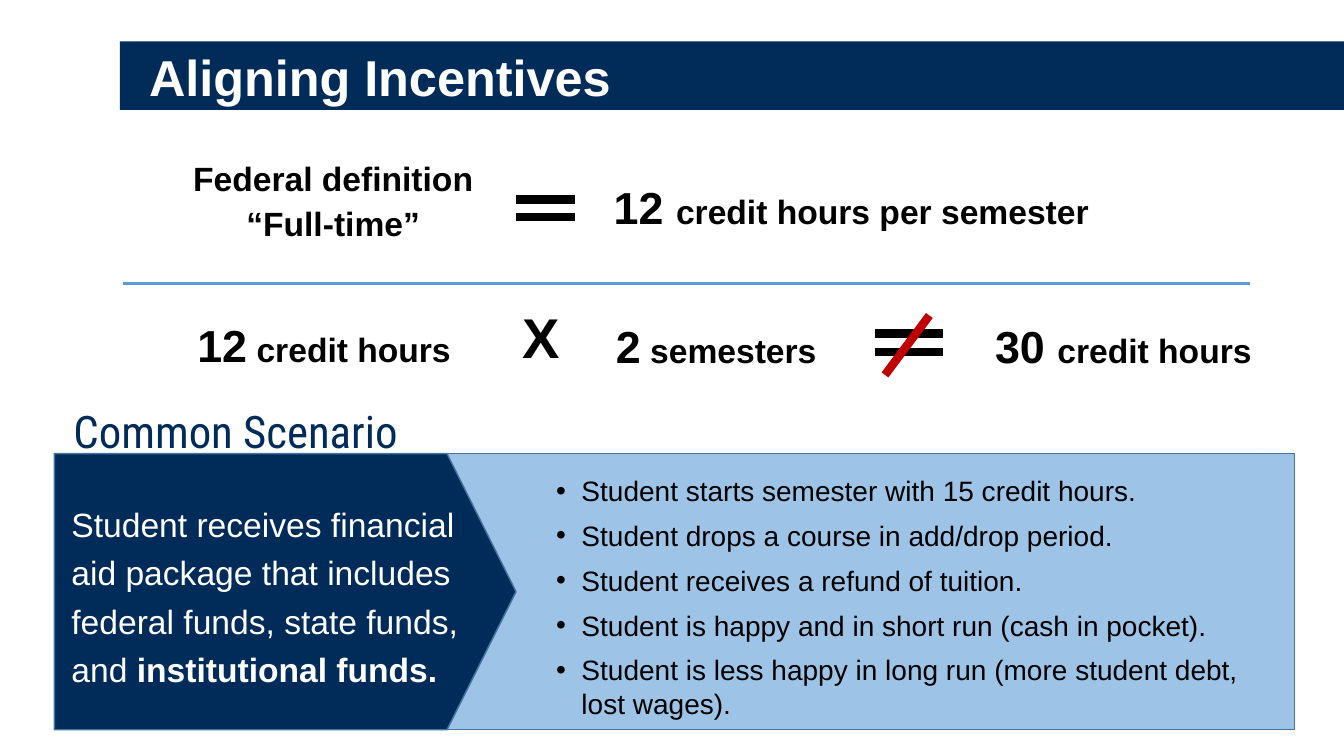
from dataclasses import dataclass

from lxml.etree import SubElement
from pptx import Presentation
from pptx.dml.color import RGBColor
from pptx.enum.shapes import MSO_CONNECTOR as Connector, MSO_SHAPE as Preset
from pptx.enum.text import MSO_ANCHOR as Anchor, PP_ALIGN as Align
from pptx.oxml.ns import qn
from pptx.util import Emu, Inches, Pt

NAVY, SKY, EDGE, RULE = "012C5A", "9DC3E6", "43739E", "5B9BD5"
BLACK, WHITE, RED = "000000", "FFFFFF", "C00000"

COLUMNS, ROWS = 160, 90
presentation = Presentation()
presentation.slide_width, presentation.slide_height = Inches(13.33), Inches(7.5)
COLUMN = presentation.slide_width / COLUMNS
ROW = presentation.slide_height / ROWS
slide = presentation.slides.add_slide(presentation.slide_layouts[6])


@dataclass(frozen=True)
class Area:
    """Left, top, width and height in grid columns and rows."""
    left: float
    top: float
    width: float
    height: float

    def emu(self) -> list[Emu]:
        return [Emu(round(self.left * COLUMN)), Emu(round(self.top * ROW)),
                Emu(round(self.width * COLUMN)), Emu(round(self.height * ROW))]


@dataclass(frozen=True)
class Phrase:
    text: str
    size: float
    bold: bool = True


@dataclass(frozen=True)
class Label:
    area: Area
    phrases: tuple[Phrase, ...]
    color: str = BLACK
    align: Align = Align.CENTER
    spacing: float = 1.1
    font: str = "Arial"
    anchor: Anchor = Anchor.TOP
    wrap: bool = True


@dataclass(frozen=True)
class Stroke:
    x1: float
    y1: float
    x2: float
    y2: float
    color: str = BLACK
    width: float = 6


def rgb(color: str) -> RGBColor:
    return RGBColor.from_string(color)


def draw_shape(preset: Preset, area: Area, fill: str, edge: str | None = None):
    shape = slide.shapes.add_shape(preset, *area.emu())
    shape.shadow.inherit = False
    shape.fill.solid()
    shape.fill.fore_color.rgb = rgb(fill)
    if edge:
        shape.line.color.rgb = rgb(edge)
        shape.line.width = Pt(1)
    else:
        shape.line.fill.background()
    return shape


def draw_label(label: Label) -> None:
    frame = slide.shapes.add_textbox(*label.area.emu()).text_frame
    frame.word_wrap = label.wrap
    frame.vertical_anchor = label.anchor
    paragraph = frame.paragraphs[0]
    paragraph.alignment, paragraph.line_spacing = label.align, label.spacing
    for phrase in label.phrases:
        run = paragraph.add_run()
        run.text = phrase.text
        run.font.name, run.font.size, run.font.bold = label.font, Pt(phrase.size), phrase.bold
        run.font.color.rgb = rgb(label.color)


def draw_bullets(area: Area, items: list[str]) -> None:
    frame = slide.shapes.add_textbox(*area.emu()).text_frame
    frame.word_wrap = True
    frame.text = "\n".join(items)
    for paragraph in frame.paragraphs:
        properties = paragraph._p.get_or_add_pPr()
        properties.set("marL", str(Inches(0.25)))
        properties.set("indent", str(-Inches(0.25)))
        SubElement(properties, qn("a:buFont")).set("typeface", "Arial")
        SubElement(properties, qn("a:buChar")).set("char", "•")
        paragraph.space_after = Pt(8)
        for run in paragraph.runs:
            run.font.name, run.font.size = "Arial", Pt(20)
            run.font.color.rgb = rgb(BLACK)


def draw_stroke(stroke: Stroke) -> None:
    line = slide.shapes.add_connector(
        Connector.STRAIGHT,
        Emu(round(stroke.x1 * COLUMN)), Emu(round(stroke.y1 * ROW)),
        Emu(round(stroke.x2 * COLUMN)), Emu(round(stroke.y2 * ROW)))
    line.line.color.rgb = rgb(stroke.color)
    line.line.width = Pt(stroke.width)
    SubElement(line._element.spPr, qn("a:effectLst"))


def equation_term(area: Area, number: str, unit: str) -> Label:
    return Label(area, (Phrase(number, 32), Phrase(unit, 24)))


def equals_sign(left: float, right: float, top: float, gap: float) -> list[Stroke]:
    return [Stroke(left, y, right, y) for y in (top, top + gap)]


# Title band
draw_shape(Preset.RECTANGLE, Area(14.28, 4.92, 145.72, 8.16), NAVY)

# Scenario panel and arrow
PANEL_TOP, PANEL_HEIGHT = 54, 32.88
draw_shape(Preset.RECTANGLE, Area(52.2, PANEL_TOP, 101.88, PANEL_HEIGHT), SKY, EDGE)
draw_bullets(Area(65.04, 55.8, 86.88, 31.08), [
    "Student starts semester with 15 credit hours.",
    "Student drops a course in add/drop period.",
    "Student receives a refund of tuition.",
    "Student is happy and in short run (cash in pocket).",
    "Student is less happy in long run (more student debt, lost wages).",
])
aid_arrow = draw_shape(Preset.PENTAGON, Area(6.48, PANEL_TOP, 54.96, PANEL_HEIGHT), NAVY, EDGE)
aid_arrow.adjustments[0] = 0.25

# Title, equations and scenario wording
TERM_HEIGHT = 8.28
labels = [
    Label(Area(16.56, 0.84, 130.08, 17.4), (Phrase("Aligning Incentives", 36),),
          WHITE, Align.LEFT, 0.9, anchor=Anchor.MIDDLE),
    Label(Area(21.12, 17.76, 37.08, 11.88), (Phrase("Federal definition “Full-time”", 24),)),
    equation_term(Area(69.96, 20.16, 62.76, TERM_HEIGHT), "12 ", "credit hours per semester"),
    equation_term(Area(21.12, 36.6, 34.92, TERM_HEIGHT), "12", " credit hours"),
    Label(Area(61.08, 35.4, 8.88, 9.24), (Phrase("X", 40),), align=Align.LEFT, spacing=1.0),
    equation_term(Area(67.2, 36.72, 36.12, TERM_HEIGHT), "2", " semesters"),
    equation_term(Area(113.52, 36.72, 40.44, TERM_HEIGHT), "30 ", "credit hours"),
    Label(Area(7.32, 58.44, 50.88, 24),
          (Phrase("Student receives financial aid package that includes federal funds, "
                  "state funds, and ", 24, False), Phrase("institutional funds.", 24)),
          WHITE, Align.LEFT, 1.2),
    Label(Area(7.56, 47.52, 42.84, 7.68), (Phrase("Common Scenario", 32, False),),
          NAVY, Align.LEFT, 1.0, "Roboto Condensed", wrap=False),
]
for label in labels:
    draw_label(label)

# Equals signs, red slash and divider
strokes = [
    *equals_sign(61.44, 68.4, 23.76, 2.04),
    *equals_sign(104.16, 112.32, 39.72, 2.16),
    Stroke(110.64, 37.56, 105.36, 44.64, RED),
    Stroke(14.64, 33.72, 148.8, 33.72, RULE, 2.25),
]
for stroke in strokes:
    draw_stroke(stroke)

presentation.save("out.pptx")
